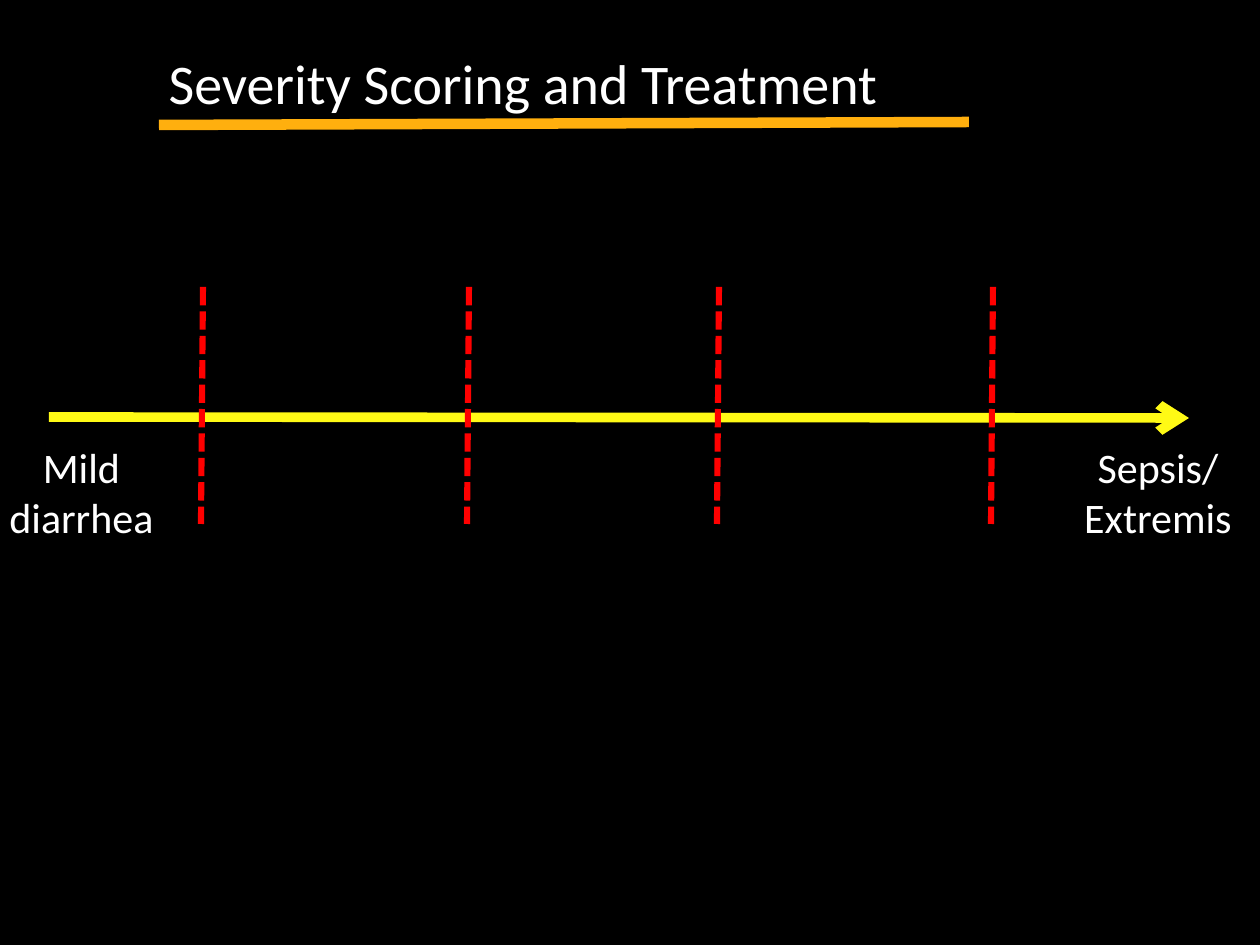
from pptx import Presentation, util as u
from pptx.dml.color import RGBColor
from pptx.enum import dml, shapes, text
from pptx.oxml.ns import qn
from lxml import etree

# Content, lengths in px
SIZE = (1260, 945)
TITLE = ("Severity Scoring and Treatment", (156, 42, 813, 79))
RULE = (159, 125, 969, 122)
AXIS = (49, 417, 1189, 418)
LABELS = [
    (["Mild", "diarrhea"], (-4, 435, 171, 115)),
    (["Sepsis/", "Extremis"], (1071, 435, 174, 115)),
]
MARKS = [203, 469, 719, 993]
TOP, END, LEAN = 287, 524, 2

THEME = {
    "font": "Calibri", "back": "000000", "ink": "FFFFFF",
    "title": 32, "label": 24,
    "rule": ("FFAF0E", 6), "axis": ("FFFA15", 5.5), "mark": ("FF0000", 3.5),
}


def px(*vals):
    return [u.Emu(round(v * u.Inches(1) / 126)) for v in vals]


def color(name):
    return RGBColor.from_string(name)


def put(frame, lines, size, align, wrap):
    """Fill a text frame, one paragraph per line."""
    form = {"word_wrap": wrap, "auto_size": text.MSO_AUTO_SIZE.NONE,
            "vertical_anchor": text.MSO_ANCHOR.TOP}
    for key, val in form.items():
        setattr(frame, key, val)
    frame.text = "\n".join(lines)
    for para in frame.paragraphs:
        para.alignment = align
        font = para.runs[0].font
        for key, val in {"name": THEME["font"], "size": u.Pt(size)}.items():
            setattr(font, key, val)
        font.color.rgb = color(THEME["ink"])


def draw(slide, ends, style):
    """Add a plain line without a shadow and return its format."""
    link = slide.shapes.add_connector(shapes.MSO_CONNECTOR.STRAIGHT, *px(*ends))
    tone, width = THEME[style]
    link.line.color.rgb = color(tone)
    link.line.width = u.Pt(width)
    etree.SubElement(link._element.spPr, qn("a:effectLst"))
    return link.line


def main():
    deck = Presentation()
    deck.slide_width, deck.slide_height = px(*SIZE)
    slide = deck.slides.add_slide(deck.slide_layouts[5])
    fill = slide.background.fill
    fill.solid()
    fill.fore_color.rgb = color(THEME["back"])

    # Title and its underline
    words, area = TITLE
    head = slide.shapes.title
    for key, val in zip(("left", "top", "width", "height"), px(*area)):
        setattr(head, key, val)
    put(head.text_frame, [words], THEME["title"], text.PP_ALIGN.LEFT, True)
    draw(slide, RULE, "rule")

    # Severity axis with an arrowhead
    axis = draw(slide, AXIS, "axis")
    etree.SubElement(axis._get_or_add_ln(), qn("a:tailEnd"), type="arrow")

    # End labels
    for lines, area in LABELS:
        box = slide.shapes.add_textbox(*px(*area))
        put(box.text_frame, lines, THEME["label"], text.PP_ALIGN.CENTER, False)

    # Dashed stage marks
    for x in MARKS:
        mark = draw(slide, (x, TOP, x - LEAN, END), "mark")
        mark.dash_style = dml.MSO_LINE.SQUARE_DOT

    deck.save("out.pptx")


if __name__ == "__main__":
    main()
